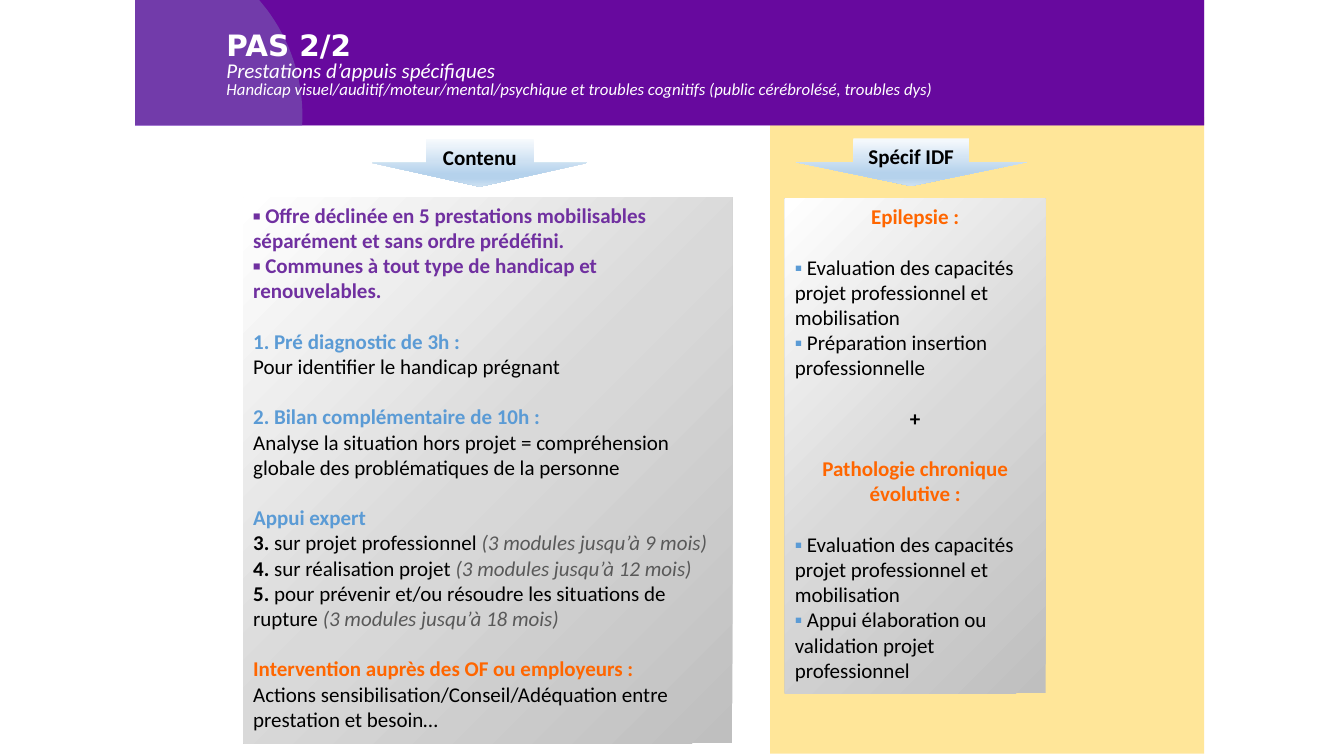
from dataclasses import dataclass
from math import asin, cos, sin

from lxml import etree
from pptx import Presentation
from pptx.dml.color import RGBColor
from pptx.enum.shapes import MSO_SHAPE
from pptx.enum.text import MSO_ANCHOR, MSO_AUTO_SIZE, PP_ALIGN
from pptx.oxml.ns import qn
from pptx.shapes.autoshape import Shape
from pptx.slide import Slide
from pptx.text.text import TextFrame
from pptx.util import Inches, Pt

RECTANGLE, DOWN_ARROW = MSO_SHAPE.RECTANGLE, MSO_SHAPE.DOWN_ARROW
TOP, MIDDLE = MSO_ANCHOR.TOP, MSO_ANCHOR.MIDDLE
NO_AUTOFIT = MSO_AUTO_SIZE.NONE
LEFT, CENTER = PP_ALIGN.LEFT, PP_ALIGN.CENTER

WIDTH, HEIGHT = Inches(13.33), Inches(7.5)
BODY_SIZE = 15
BLANK_LINE = Pt(18)

BLACK = RGBColor(0x00, 0x00, 0x00)
WHITE = RGBColor(0xFF, 0xFF, 0xFF)
YELLOW = RGBColor(0xFF, 0xE6, 0x99)
VIOLET = RGBColor(0x6C, 0x00, 0xC4)
LAVENDER = RGBColor(0x7E, 0x53, 0xD8)
PLUM = RGBColor(0x61, 0x17, 0x66)
PURPLE = RGBColor(0x70, 0x30, 0xA0)
BLUE = RGBColor(0x5B, 0x9B, 0xD5)
ORANGE = RGBColor(0xFF, 0x66, 0x00)
DARK_GREY = RGBColor(0x59, 0x59, 0x59)
MID_GREY = RGBColor(0xBF, 0xBF, 0xBF)
LIGHT_GREY = RGBColor(0xD9, 0xD9, 0xD9)
ICE = RGBColor(0xF7, 0xFA, 0xFD)
SKY = RGBColor(0xB5, 0xD2, 0xEC)
PALE_SKY = RGBColor(0xCE, 0xE1, 0xF2)


@dataclass(frozen=True)
class Frame:
    """Left, top, width and height in percent of the slide."""
    left: float
    top: float
    width: float
    height: float

    def lengths(self) -> tuple[int, int, int, int]:
        return (int(WIDTH * self.left / 100), int(HEIGHT * self.top / 100),
                int(WIDTH * self.width / 100), int(HEIGHT * self.height / 100))


@dataclass(frozen=True)
class Gradient:
    stops: tuple[tuple[int, RGBColor], ...]
    angle: int


@dataclass(frozen=True)
class Span:
    text: str
    color: RGBColor = BLACK
    bold: bool = False
    italic: bool = False
    size: float = BODY_SIZE
    font: str = "Calibri"


@dataclass(frozen=True)
class Line:
    spans: tuple[Span, ...]
    gap: bool = False
    align: PP_ALIGN = LEFT


@dataclass(frozen=True)
class Panel:
    frame: Frame
    lines: tuple[Line, ...]
    kind: MSO_SHAPE
    gradient: Gradient
    anchor: MSO_ANCHOR
    margin: float


def heading(text: str, color: RGBColor, gap: bool = False, align: PP_ALIGN = LEFT) -> Line:
    return Line((Span(text, color, bold=True),), gap, align)


def plain(text: str) -> Line:
    return Line((Span(text),))


def bullet(text: str, gap: bool = False) -> Line:
    return Line((Span("▪ ", BLUE), Span(text)), gap)


def module(number: int, text: str, months: int) -> Line:
    return Line((Span(f"{number}. ", bold=True), Span(f"{text} "),
                 Span(f"(3 modules jusqu’à {months} mois)", DARK_GREY, italic=True)))


GREY_FADE = Gradient(((0, MID_GREY), (50, LIGHT_GREY), (100, WHITE)), 225)
BLUE_FADE = Gradient(((0, ICE), (74, SKY), (83, SKY), (100, PALE_SKY)), 90)
ASSESSMENT = "Evaluation des capacités projet professionnel et mobilisation"


def arrow(frame: Frame, label: str) -> Panel:
    return Panel(frame, (heading(label, BLACK, align=CENTER),), DOWN_ARROW, BLUE_FADE, MIDDLE, 0)


def card(frame: Frame, lines: tuple[Line, ...]) -> Panel:
    return Panel(frame, lines, RECTANGLE, GREY_FADE, TOP, 0.05)


CONTENT = (
    heading("▪ Offre déclinée en 5 prestations mobilisables séparément et sans ordre prédéfini.", PURPLE),
    heading("▪ Communes à tout type de handicap et renouvelables.", PURPLE),
    heading("1. Pré diagnostic de 3h :", BLUE, gap=True),
    plain("Pour identifier le handicap prégnant"),
    heading("2. Bilan complémentaire de 10h :", BLUE, gap=True),
    plain("Analyse la situation hors projet = compréhension globale des problématiques de la personne"),
    heading("Appui expert", BLUE, gap=True),
    module(3, "sur projet professionnel", 9),
    module(4, "sur réalisation projet", 12),
    module(5, "pour prévenir et/ou résoudre les situations de rupture", 18),
    heading("Intervention auprès des OF ou employeurs :", ORANGE, gap=True),
    plain("Actions sensibilisation/Conseil/Adéquation entre prestation et besoin…"),
)
REGIONAL = (
    heading("Epilepsie :", ORANGE, align=CENTER),
    bullet(ASSESSMENT, gap=True),
    bullet("Préparation insertion professionnelle"),
    heading("+", BLACK, gap=True, align=CENTER),
    heading("Pathologie chronique évolutive :", ORANGE, gap=True, align=CENTER),
    bullet(ASSESSMENT, gap=True),
    bullet("Appui élaboration ou validation projet professionnel"),
)
PANELS = (
    card(Frame(18.1, 26.1, 36.4, 72.2), CONTENT),
    arrow(Frame(27.7, 18.4, 16, 6.3), "Contenu"),
    arrow(Frame(59.2, 18.3, 17.2, 6.3), "Spécif IDF"),
    card(Frame(58.4, 26.3, 19.4, 65.4), REGIONAL),
)
TITLE_FRAME = Frame(16.1, 3.6, 57.3, 10.3)
TITLE_SPANS = (
    Span("PAS 2/2", WHITE, bold=True, size=21, font="DejaVu Sans"),
    Span("Prestations d’appuis spécifiques", WHITE, italic=True),
    Span("Handicap visuel/auditif/moteur/mental/psychique et troubles cognitifs "
         "(public cérébrolésé, troubles dys)", WHITE, italic=True, size=12),
)
SIDE_BAND = Frame(57.3, 15.5, 32.3, 84.2)
BANNER = Frame(10.05, 0, 79.55, 16.6)


def paint(shape: Shape, color: RGBColor) -> None:
    shape.shadow.inherit = False
    shape.line.fill.background()
    shape.fill.solid()
    shape.fill.fore_color.rgb = color


def add_band(page: Slide, frame: Frame, color: RGBColor) -> Shape:
    band = page.shapes.add_shape(RECTANGLE, *frame.lengths())
    paint(band, color)
    return band


def add_disc_corner(page: Slide) -> None:
    left, top, _, height = BANNER.lengths()
    radius, center_x, center_y = WIDTH * 0.131, WIDTH * 0.094, HEIGHT * 0.153
    start, end = asin((top - center_y) / radius), asin((top + height - center_y) / radius)
    angles = [start + (end - start) * step / 30 for step in range(31)]
    arc = [(int(center_x + radius * cos(a)), int(center_y + radius * sin(a))) for a in angles]
    builder = page.shapes.build_freeform(left, top)
    builder.add_line_segments(arc + [(left, top + height)], close=True)
    paint(builder.convert_to_shape(), LAVENDER)


def set_opacity(shape: Shape, percent: int) -> None:
    color = shape.fill._xPr.find(qn("a:solidFill"))[0]
    etree.SubElement(color, qn("a:alpha"), val=str(percent * 1000))


def set_gradient(shape: Shape, gradient: Gradient) -> None:
    shape.fill.gradient()
    fill = shape.fill._xPr.find(qn("a:gradFill"))
    for child in list(fill):
        fill.remove(child)
    stops = etree.SubElement(fill, qn("a:gsLst"))
    for position, color in gradient.stops:
        stop = etree.SubElement(stops, qn("a:gs"), pos=str(position * 1000))
        etree.SubElement(stop, qn("a:srgbClr"), val=str(color))
    etree.SubElement(fill, qn("a:lin"), ang=str(gradient.angle * 60000), scaled="0")


def set_frame(text: TextFrame, anchor: MSO_ANCHOR, margin: float) -> None:
    text.word_wrap = True
    text.auto_size = NO_AUTOFIT
    text.vertical_anchor = anchor
    text.margin_left = text.margin_right = Inches(0.1)
    text.margin_top = text.margin_bottom = Inches(margin)


def add_span(para, span: Span) -> None:
    run = para.add_run()
    run.text = span.text
    run.font.name, run.font.size = span.font, Pt(span.size)
    run.font.bold, run.font.italic = span.bold, span.italic
    run.font.color.rgb = span.color


def add_panel(page: Slide, panel: Panel) -> None:
    box = page.shapes.add_shape(panel.kind, *panel.frame.lengths())
    paint(box, WHITE)
    set_gradient(box, panel.gradient)
    set_frame(box.text_frame, panel.anchor, panel.margin)
    for index, line in enumerate(panel.lines):
        para = box.text_frame.add_paragraph() if index else box.text_frame.paragraphs[0]
        para.alignment = line.align
        para.space_before = BLANK_LINE if line.gap else Pt(0)
        for span in line.spans:
            add_span(para, span)


def add_title(page: Slide) -> None:
    title = page.shapes.title
    title.left, title.top, title.width, title.height = TITLE_FRAME.lengths()
    page.shapes._spTree.append(title._element)
    set_frame(title.text_frame, MIDDLE, 0.04)
    name, subject, audience = TITLE_SPANS
    first, second = title.text_frame.paragraphs[0], title.text_frame.add_paragraph()
    for para in (first, second):
        para.alignment, para.line_spacing = LEFT, 0.8
    add_span(first, name)
    add_span(second, subject)
    second.add_line_break()
    add_span(second, audience)


def main() -> None:
    deck = Presentation()
    deck.slide_width, deck.slide_height = WIDTH, HEIGHT
    page = deck.slides.add_slide(deck.slide_layouts[5])
    add_band(page, SIDE_BAND, YELLOW)
    add_band(page, BANNER, VIOLET)
    add_disc_corner(page)
    set_opacity(add_band(page, BANNER, PLUM), 40)
    add_title(page)
    for panel in PANELS:
        add_panel(page, panel)
    deck.save("out.pptx")


if __name__ == "__main__":
    main()
